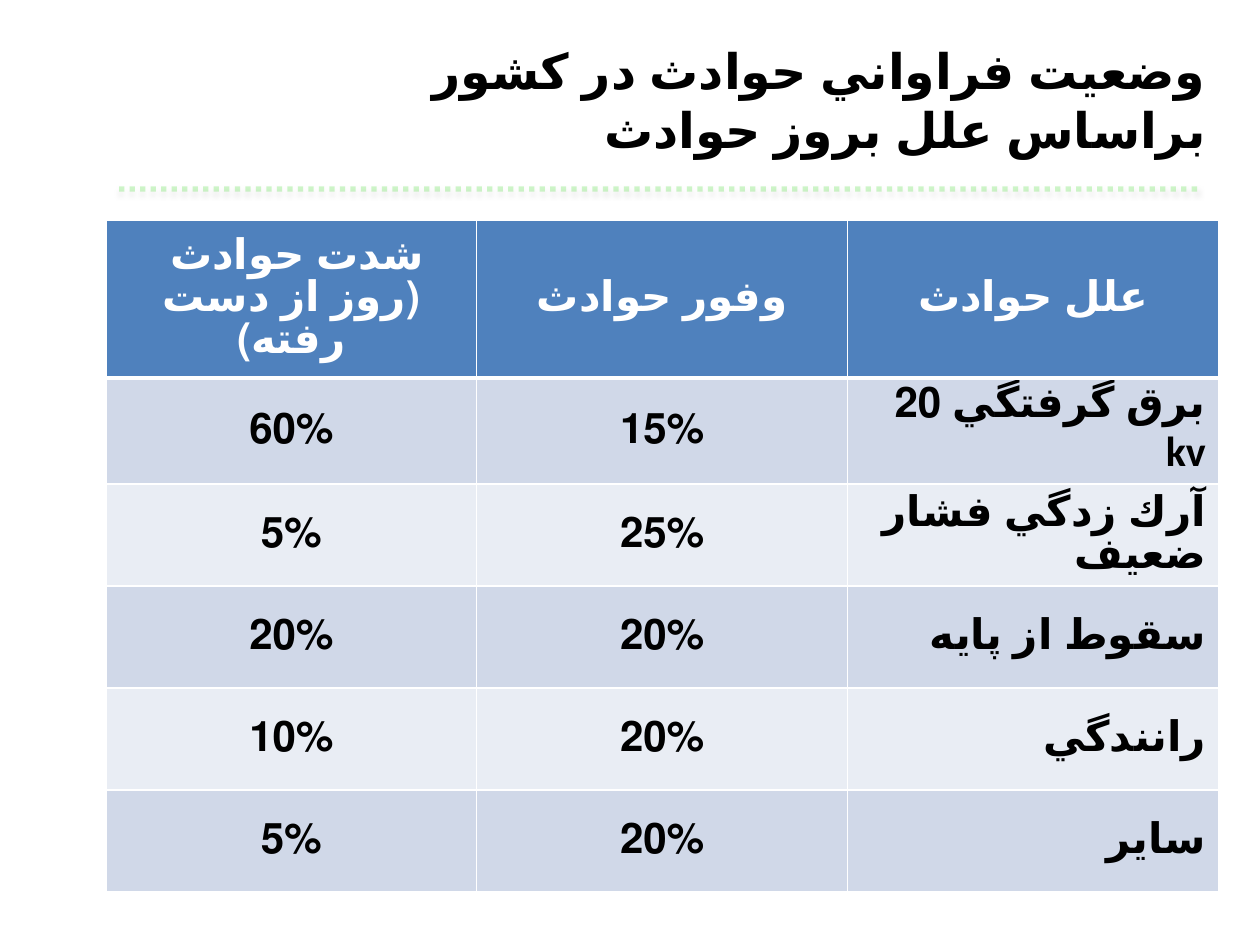
"""Build a slide with a table of accident causes, frequency and severity."""
from lxml import etree
from pptx import Presentation
from pptx.dml.color import RGBColor
from pptx.enum.dml import MSO_LINE
from pptx.enum.shapes import MSO_CONNECTOR
from pptx.enum.text import MSO_ANCHOR, PP_ALIGN
from pptx.oxml import parse_xml
from pptx.oxml.ns import qn
from pptx.util import Inches, Pt

CENTER, RIGHT = PP_ALIGN.CENTER, PP_ALIGN.RIGHT
MIDDLE = MSO_ANCHOR.MIDDLE
STRAIGHT = MSO_CONNECTOR.STRAIGHT
DOTTED = MSO_LINE.ROUND_DOT
NS = "http://schemas.openxmlformats.org/drawingml/2006/main"


def rgb(value):
    return RGBColor.from_string(value)


def format_text(tf, align, size, color):
    for p in tf.paragraphs:
        p.alignment = align
        p._p.get_or_add_pPr().set("rtl", "1")
        for r in p.runs:
            r.font.name = "Calibri"
            r.font.size = Pt(size)
            r.font.bold = True
            r.font.color.rgb = rgb(color)
            r._r.get_or_add_rPr().set("lang", "fa-IR")


prs = Presentation()
prs.slide_width, prs.slide_height = Inches(10), Inches(7.5)
s = prs.slides.add_slide(prs.slide_layouts[5])

title = s.shapes.title
title.left, title.top = Inches(1.75), Inches(0.25)
title.width, title.height = Inches(7.92), Inches(1.08)
title.text_frame.text = "وضعيت فراواني حوادث در كشور براساس علل بروز حوادث"
title.text_frame.vertical_anchor = MIDDLE
format_text(title.text_frame, RIGHT, 28, "000000")

rule = s.shapes.add_connector(STRAIGHT, Inches(9.5), Inches(1.5), Inches(0.92), Inches(1.5))
rule.line.color.rgb = rgb("26D80E")
rule.line.width = Pt(3)
rule.line.dash_style = DOTTED
line_color = rule.line._ln.find(".//" + qn("a:srgbClr"))
etree.SubElement(line_color, qn("a:alpha"), val="22000")
rule._element.spPr.append(parse_xml(
    f'<a:effectLst xmlns:a="{NS}"><a:outerShdw blurRad="{Pt(3.1)}" dist="{Pt(1.8)}" '
    'dir="5400000" rotWithShape="0"><a:srgbClr val="000000"><a:alpha val="35000"/>'
    "</a:srgbClr></a:outerShdw></a:effectLst>"))

rows = [
    ("شدت حوادث \n(روز از دست رفته)", "وفور حوادث", "علل حوادث"),
    ("60%", "15%", "برق گرفتگي 20 kv"),
    ("5%", "25%", "آرك زدگي فشار ضعيف"),
    ("20%", "20%", "سقوط از پايه"),
    ("10%", "20%", "رانندگي"),
    ("5%", "20%", "ساير"),
]
table = s.shapes.add_table(len(rows), 3, Inches(0.84), Inches(1.75),
                           Inches(8.83), Inches(5.31)).table
for column in table.columns:
    column.width = Inches(8.83 / 3)
for i, row in enumerate(rows):
    table.rows[i].height = Inches(0.81 if i else 1.25)
    for j, text in enumerate(row):
        cell = table.cell(i, j)
        cell.text_frame.text = text
        cell.vertical_anchor = MIDDLE
        align = RIGHT if i and j == 2 else CENTER
        format_text(cell.text_frame, align, 24, "000000" if i else "FFFFFF")
        tcPr = cell._tc.get_or_add_tcPr()
        for side in "LRTB":
            thick = (i == 0 and side == "B") or (i == 1 and side == "T")
            tcPr.append(parse_xml(
                f'<a:ln{side} xmlns:a="{NS}" w="{Pt(3 if thick else 1)}"><a:solidFill>'
                f'<a:srgbClr val="FFFFFF"/></a:solidFill></a:ln{side}>'))
        cell.fill.solid()
        fill = "4F81BD" if i == 0 else "D0D8E8" if i % 2 else "E9EDF4"
        cell.fill.fore_color.rgb = rgb(fill)

prs.save("out.pptx")
